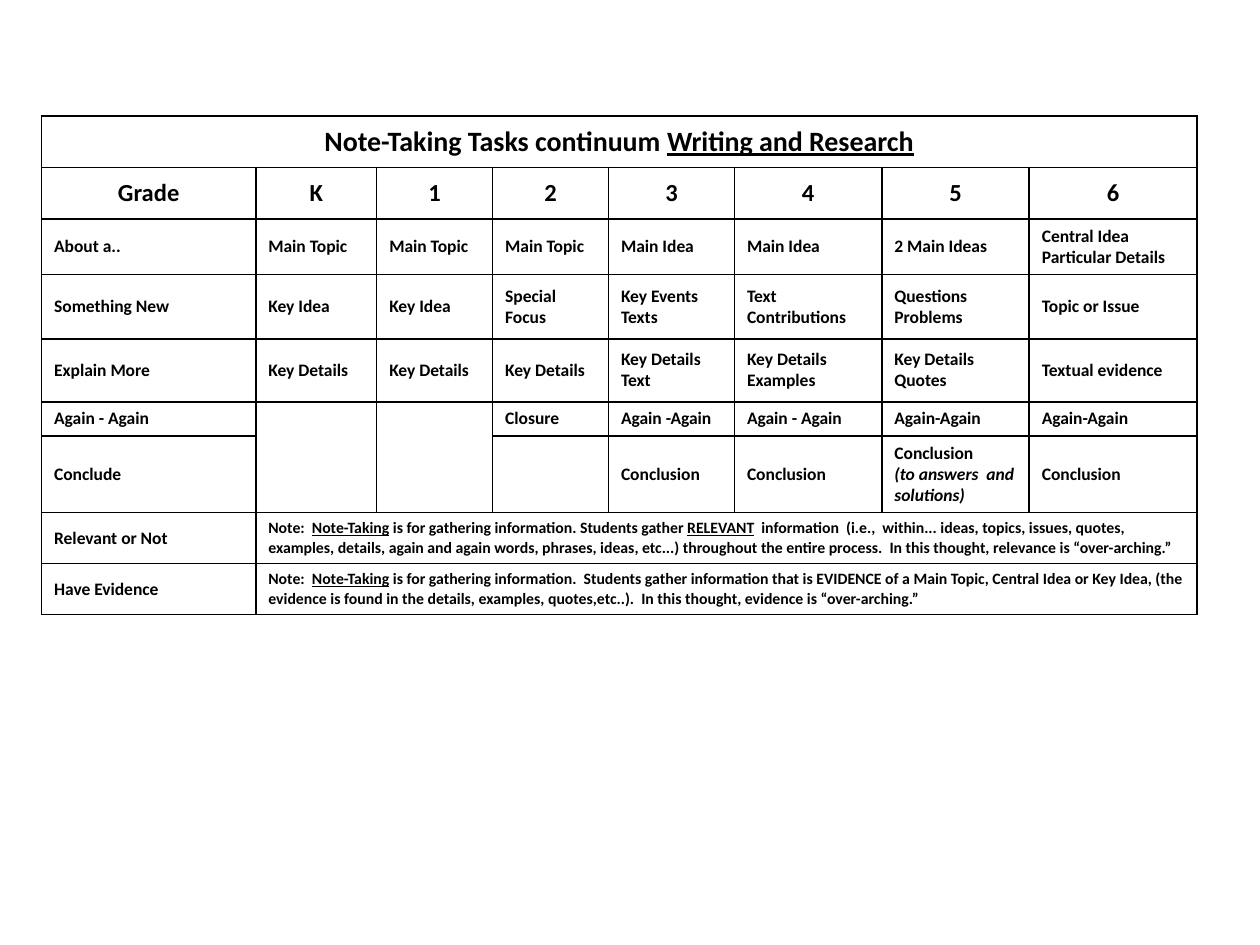
import pptx
import pptx.dml.color
import pptx.enum.text
import pptx.oxml.ns
import pptx.table
import pptx.util
from dataclasses import dataclass
from lxml import etree

Inches = pptx.util.Inches
Align = pptx.enum.text.PP_ALIGN
Anchor = pptx.enum.text.MSO_ANCHOR


@dataclass(frozen=True)
class Theme:
    font: str = "Calibri"
    ink: str = "000000"
    head: int = 16
    grade: int = 14
    body: int = 10
    note: int = 9
    line: int = 1


@dataclass(frozen=True)
class Run:
    text: str
    under: bool = False
    slant: bool = False


@dataclass(frozen=True)
class Entry:
    row: int
    col: int
    paras: list[list[Run]]
    size: int
    align: Align = Align.LEFT
    anchor: Anchor = Anchor.MIDDLE


THEME = Theme()
COLS = [1.7, 0.96, 0.92, 0.92, 1, 1.17, 1.17, 1.33]
ROWS = [0.41, 0.41, 0.44, 0.51, 0.5, 0.27, 0.61, 0.4, 0.4]
LAST = len(COLS) - 1
TITLE = [Run("Note-Taking Tasks continuum "), Run("Writing and Research", under=True)]
GRADES = ["Grade", "K", "1", "2", "3", "4", "5", "6"]
TASKS = [
    ["About a..", "Main Topic", "Main Topic", "Main Topic", "Main Idea",
     "Main Idea", "2 Main Ideas", "Central Idea\nParticular Details"],
    ["Something New", "Key Idea", "Key Idea", "Special Focus", "Key Events\nTexts",
     "Text\nContributions", "Questions Problems", "Topic or Issue"],
    ["Explain More", "Key Details", "Key Details", "Key Details", "Key Details\nText",
     "Key Details Examples", "Key Details\nQuotes", "Textual evidence"],
    ["Again - Again", "", "", "Closure", "Again -Again",
     "Again - Again", "Again-Again", "Again-Again"],
    ["Conclude", "", "", "", "Conclusion",
     "Conclusion", "Conclusion\n(to answers  and solutions)", "Conclusion"],
]
LEAD = [Run("Note:  "), Run("Note-Taking", under=True)]
NOTES = [
    ("Relevant or Not", LEAD + [
        Run(" is for gathering information. Students gather "),
        Run("RELEVANT", under=True),
        Run("  information  (i.e.,  within... ideas, topics, issues, quotes, examples, "
            "details, again and again words, phrases, ideas, etc...) throughout the "
            "entire process.  In this thought, relevance is “over-arching.”"),
    ]),
    ("Have Evidence", LEAD + [
        Run(" is for gathering information.  Students gather information that is EVIDENCE "
            "of a Main Topic, Central Idea or Key Idea, (the evidence is found in the "
            "details, examples, quotes,etc..).  In this thought, evidence is “over-arching.”"),
    ]),
]


def split(text: str) -> list[list[Run]]:
    return [[Run(line, slant=line.startswith("("))] for line in text.split("\n")]


def collect() -> list[Entry]:
    items = [Entry(0, 0, [TITLE], THEME.head, Align.CENTER)]
    items += [Entry(1, col, split(text), THEME.grade, Align.CENTER)
              for col, text in enumerate(GRADES)]
    items += [Entry(row, col, split(text), THEME.body)
              for row, line in enumerate(TASKS, 2)
              for col, text in enumerate(line) if text]
    for row, (label, runs) in enumerate(NOTES, 2 + len(TASKS)):
        items.append(Entry(row, 0, split(label), THEME.body))
        items.append(Entry(row, 1, [runs], THEME.note, anchor=Anchor.TOP))
    return items


def frame(cell: pptx.table._Cell) -> None:
    qn = pptx.oxml.ns.qn
    props = cell._tc.get_or_add_tcPr()
    for side in ("a:lnL", "a:lnR", "a:lnT", "a:lnB"):
        line = etree.SubElement(props, qn(side), w=str(pptx.util.Pt(THEME.line)))
        fill = etree.SubElement(line, qn("a:solidFill"))
        etree.SubElement(fill, qn("a:srgbClr"), val=THEME.ink)
    cell.fill.background()


def shrink(cell: pptx.table._Cell) -> None:
    para = cell.text_frame.paragraphs[0]._p
    etree.SubElement(para, pptx.oxml.ns.qn("a:endParaRPr"), sz=str(THEME.body * 100))


def write(table: pptx.table.Table, item: Entry) -> None:
    cell = table.cell(item.row, item.col)
    cell.vertical_anchor = item.anchor
    body = cell.text_frame
    for pos, runs in enumerate(item.paras):
        para = body.add_paragraph() if pos else body.paragraphs[0]
        para.alignment = item.align
        for part in runs:
            run = para.add_run()
            run.text = part.text
            font = run.font
            font.name = THEME.font
            font.size = pptx.util.Pt(item.size)
            font.bold = True
            font.italic = part.slant
            font.underline = part.under
            font.color.rgb = pptx.dml.color.RGBColor.from_string(THEME.ink)


def build(slide: pptx.slide.Slide) -> None:
    table = slide.shapes.add_table(
        len(ROWS), len(COLS), Inches(0.33), Inches(0.92),
        Inches(sum(COLS)), Inches(sum(ROWS))).table
    table.first_row = False
    table.horz_banding = False
    for col, width in zip(table.columns, COLS):
        col.width = Inches(width)
    for row, height in zip(table.rows, ROWS):
        row.height = Inches(height)
    for cell in table.iter_cells():
        frame(cell)
    spans = [(0, 0, 0, LAST), (5, 1, 6, 1), (5, 2, 6, 2), (7, 1, 7, LAST), (8, 1, 8, LAST)]
    for top, left, low, right in spans:
        table.cell(top, left).merge(table.cell(low, right))
    for item in collect():
        write(table, item)
    for cell in table.iter_cells():
        if not cell.text_frame.text:
            shrink(cell)


def main() -> None:
    deck = pptx.Presentation()
    deck.slide_width = Inches(10)
    deck.slide_height = Inches(7.5)
    build(deck.slides.add_slide(deck.slide_layouts[6]))
    deck.save("out.pptx")


if __name__ == "__main__":
    main()
